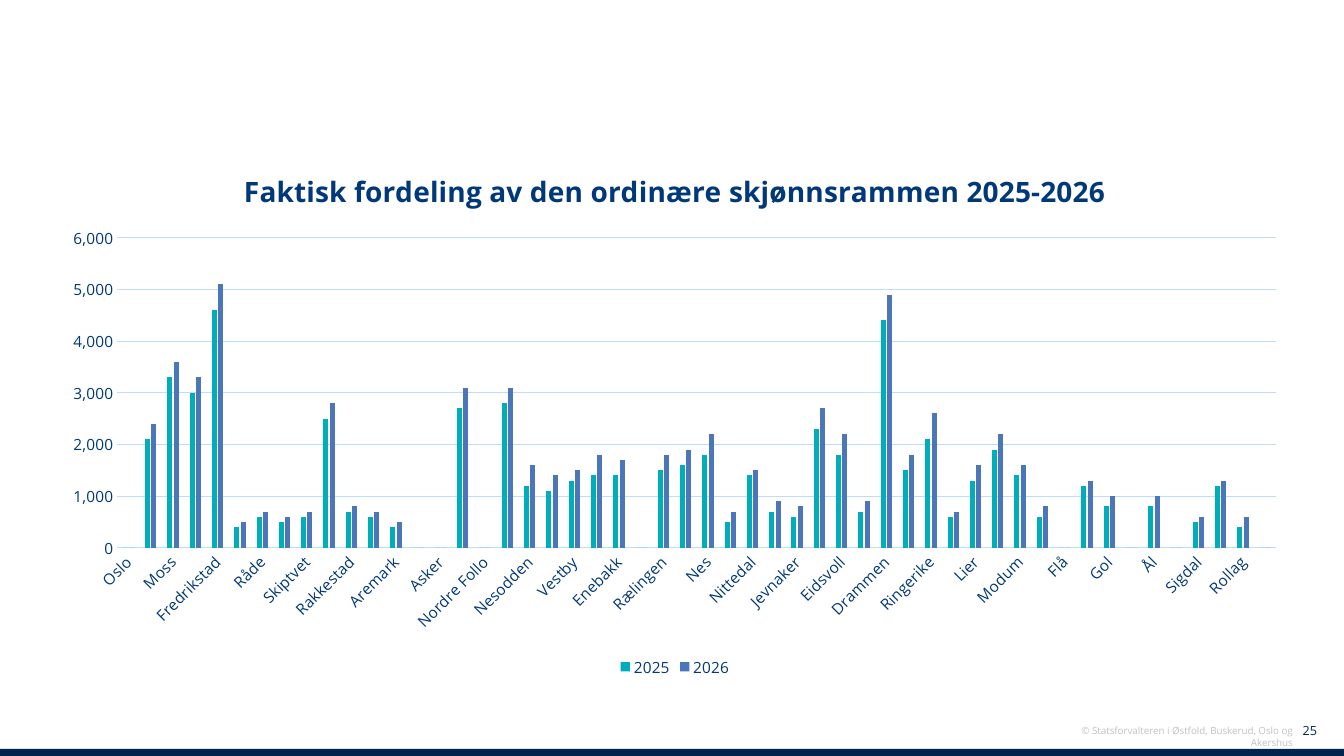
from dataclasses import dataclass

from pptx import Presentation
from pptx.chart.data import CategoryChartData
from pptx.dml.color import RGBColor
from pptx.enum.chart import XL_CHART_TYPE, XL_LEGEND_POSITION, XL_TICK_MARK
from pptx.enum.shapes import MSO_SHAPE
from pptx.enum.text import MSO_ANCHOR, PP_ALIGN
from pptx.oxml import parse_xml
from pptx.oxml.ns import nsdecls, qn
from pptx.util import Inches, Pt


@dataclass(frozen=True)
class Theme:
    font: str = "Open Sans"
    navy: str = "00244E"
    blue: str = "003879"
    pale_blue: str = "BEDCFF"
    grey: str = "BFC2C0"
    series: tuple = ("00ADBA", "4C76BA")
    title_size: int = 20
    axis_size: int = 11
    number_size: int = 9
    credit_size: int = 7


# Municipality, 2025 amount, 2026 amount
ALLOCATIONS = [
    ("Oslo", 0, 0), ("Halden", 2100, 2400), ("Moss", 3300, 3600),
    ("Sarpsborg", 3000, 3300), ("Fredrikstad", 4600, 5100), ("Hvaler", 400, 500),
    ("Råde", 600, 700), ("Våler (Viken)", 500, 600), ("Skiptvet", 600, 700),
    ("Indre Østfold", 2500, 2800), ("Rakkestad", 700, 800), ("Marker", 600, 700),
    ("Aremark", 400, 500), ("Bærum", 0, 0), ("Asker", 0, 0),
    ("Lillestrøm", 2700, 3100), ("Nordre Follo", 0, 0), ("Ullensaker", 2800, 3100),
    ("Nesodden", 1200, 1600), ("Frogn", 1100, 1400), ("Vestby", 1300, 1500),
    ("Ås", 1400, 1800), ("Enebakk", 1400, 1700), ("Lørenskog", 0, 0),
    ("Rælingen", 1500, 1800), ("Aurskog-Høland", 1600, 1900), ("Nes", 1800, 2200),
    ("Gjerdrum", 500, 700), ("Nittedal", 1400, 1500), ("Lunner", 700, 900),
    ("Jevnaker", 600, 800), ("Nannestad", 2300, 2700), ("Eidsvoll", 1800, 2200),
    ("Hurdal", 700, 900), ("Drammen", 4400, 4900), ("Kongsberg", 1500, 1800),
    ("Ringerike", 2100, 2600), ("Hole", 600, 700), ("Lier", 1300, 1600),
    ("Øvre Eiker", 1900, 2200), ("Modum", 1400, 1600), ("Krødsherad", 600, 800),
    ("Flå", 0, 0), ("Nesbyen", 1200, 1300), ("Gol", 800, 1000),
    ("Hemsedal", 0, 0), ("Ål", 800, 1000), ("Hol", 0, 0),
    ("Sigdal", 500, 600), ("Flesberg", 1200, 1300), ("Rollag", 400, 600),
    ("Nore og Uvdal", 0, 0),
]


class SlideBuilder:
    def __init__(self, slide, theme):
        self.slide = slide
        self.theme = theme

    def style_font(self, font, size, color, bold=False):
        font.name = self.theme.font
        font.size = Pt(size)
        font.bold = bold
        font.color.rgb = RGBColor.from_string(color)

    def style_line(self, line):
        line.color.rgb = RGBColor.from_string(self.theme.pale_blue)
        line.width = Pt(0.75)

    def bar(self, left, top, width, height, color):
        shape = self.slide.shapes.add_shape(
            MSO_SHAPE.RECTANGLE, Inches(left), Inches(top), Inches(width), Inches(height))
        shape.shadow.inherit = False
        shape.fill.solid()
        shape.fill.fore_color.rgb = RGBColor.from_string(color)
        shape.line.fill.background()

    def text(self, left, top, width, height, content, size, color, anchor=MSO_ANCHOR.TOP):
        box = self.slide.shapes.add_textbox(
            Inches(left), Inches(top), Inches(width), Inches(height))
        frame = box.text_frame
        frame.word_wrap = True
        frame.vertical_anchor = anchor
        paragraph = frame.paragraphs[0]
        paragraph.alignment = PP_ALIGN.RIGHT
        run = paragraph.add_run()
        run.text = content
        self.style_font(run.font, size, color)

    def column_chart(self, left, top, width, height, title, names, rows):
        theme = self.theme
        data = CategoryChartData(number_format="#,##0")
        categories, *columns = zip(*rows)
        data.categories = categories
        for name, values in zip(names, columns):
            data.add_series(name, values)
        chart = self.slide.shapes.add_chart(
            XL_CHART_TYPE.COLUMN_CLUSTERED, Inches(left), Inches(top),
            Inches(width), Inches(height), data).chart
        self.style_font(chart.font, theme.axis_size, theme.blue)

        # Title and legend
        chart.has_title = True
        run = chart.chart_title.text_frame.paragraphs[0].add_run()
        run.text = title
        self.style_font(run.font, theme.title_size, theme.blue, bold=True)
        chart.chart_title.include_in_layout = False
        chart.has_legend = True
        chart.legend.position = XL_LEGEND_POSITION.BOTTOM
        chart.legend.include_in_layout = False
        self.style_font(chart.legend.font, theme.axis_size, theme.blue)

        # Columns
        plot = chart.plots[0]
        plot.vary_by_categories = False
        plot.gap_width = 219
        plot.overlap = -27
        for series, color in zip(plot.series, theme.series):
            series.format.fill.solid()
            series.format.fill.fore_color.rgb = RGBColor.from_string(color)

        # Axes
        for axis in (chart.category_axis, chart.value_axis):
            axis.major_tick_mark = axis.minor_tick_mark = XL_TICK_MARK.NONE
            self.style_font(axis.tick_labels.font, theme.axis_size, theme.blue)
        self.style_line(chart.category_axis.format.line)
        label_body = chart.category_axis._element.find(qn("c:txPr")).find(qn("a:bodyPr"))
        label_body.set("rot", "-2700000")
        value_axis = chart.value_axis
        value_axis.minimum_scale, value_axis.maximum_scale = 0, 6000
        value_axis.major_unit = 1000
        value_axis.tick_labels.number_format = "#,##0"
        value_axis.tick_labels.number_format_is_linked = False
        value_axis.format.line.fill.background()
        value_axis.has_major_gridlines = True
        self.style_line(value_axis.major_gridlines.format.line)
        self.place_plot(chart, x=0.055, y=0.17, w=0.925, h=0.58)

    def place_plot(self, chart, **fractions):
        plot_area = chart._chartSpace.chart.plotArea
        for layout in plot_area.findall(qn("c:layout")):
            plot_area.remove(layout)
        sizes = "".join(f'<c:{key} val="{value}"/>' for key, value in fractions.items())
        plot_area.insert(0, parse_xml(
            f'<c:layout {nsdecls("c")}><c:manualLayout><c:layoutTarget val="inner"/>'
            f'<c:xMode val="edge"/><c:yMode val="edge"/>{sizes}</c:manualLayout></c:layout>'))


def main():
    presentation = Presentation()
    presentation.slide_width = Inches(13.33)
    presentation.slide_height = Inches(7.5)
    theme = Theme()
    builder = SlideBuilder(
        presentation.slides.add_slide(presentation.slide_layouts[6]), theme)

    # Footer
    builder.bar(0, 7.43, 13.33, 0.08, theme.navy)
    builder.text(12.62, 7.12, 0.54, 0.26, "25", theme.number_size, theme.navy,
                 MSO_ANCHOR.MIDDLE)
    builder.text(10.2, 7.14, 2.72, 0.22,
                 "© Statsforvalteren i Østfold, Buskerud, Oslo og Akershus",
                 theme.credit_size, theme.grey)

    # Allocation chart
    builder.column_chart(0.48, 1.46, 12.43, 5.3,
                         "Faktisk fordeling av den ordinære skjønnsrammen 2025-2026",
                         ("2025", "2026"), ALLOCATIONS)
    presentation.save("out.pptx")


if __name__ == "__main__":
    main()
